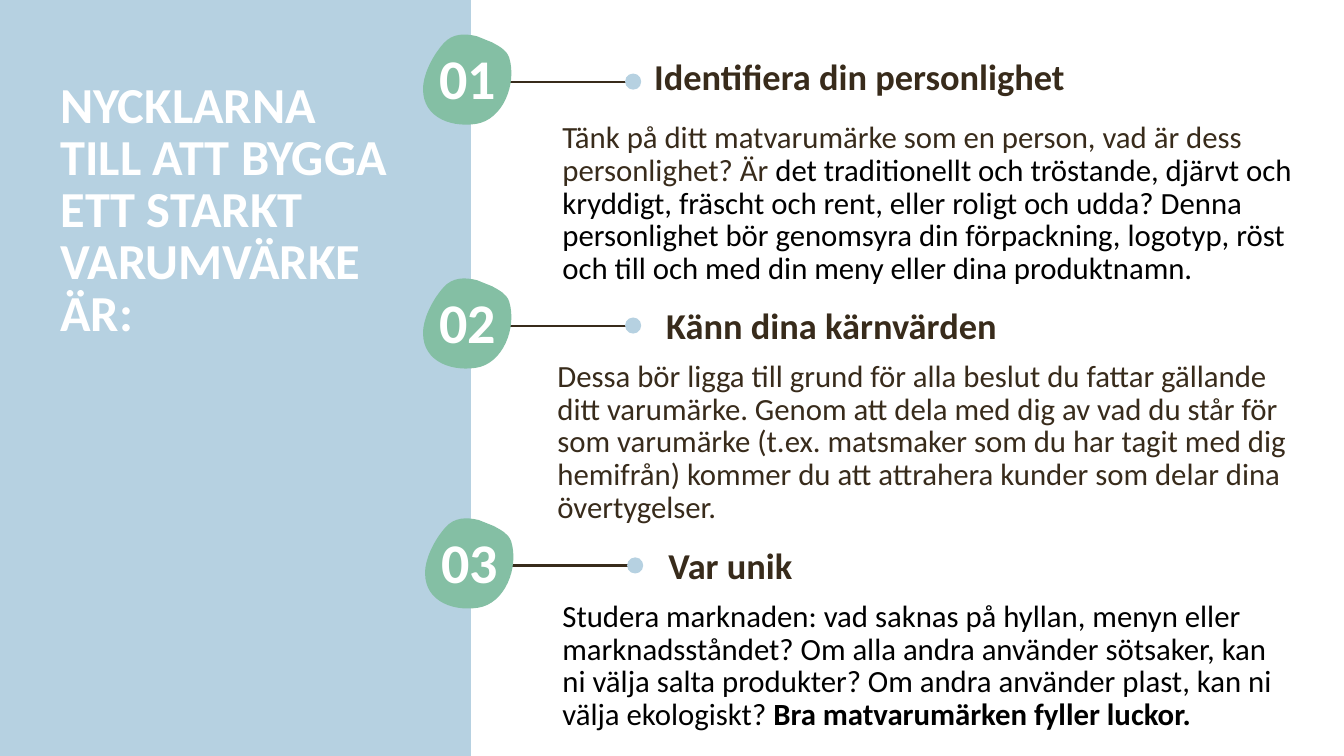
from lxml import etree
from pptx import Presentation
from pptx.dml.color import RGBColor
from pptx.enum import shapes, text
from pptx.oxml import ns
from pptx.util import Inches, Pt

FONT = "Calibri"
BLUE = RGBColor(0xB6, 0xD1, 0xE1)
GREEN = RGBColor(0x84, 0xBF, 0xA4)
BROWN = RGBColor(0x38, 0x2B, 0x1B)
WHITE = RGBColor(0xFF, 0xFF, 0xFF)
BLACK = RGBColor(0, 0, 0)

BLOB_SIZE = (0.87, 0.9)
BLOB_START = (0.53, 0.02)
BLOB_CURVES = [
    ((0.41, -0.01), (0.29, -0.01), (0.2, 0.09)),
    ((0.11, 0.19), (0.02, 0.35), (0, 0.49)),
    ((-0.04, 0.8), (0.24, 0.93), (0.52, 0.89)),
    ((0.79, 0.85), (0.93, 0.49), (0.85, 0.23)),
    ((0.82, 0.15), (0.75, 0.12), (0.68, 0.08)),
    ((0.63, 0.06), (0.58, 0.04), BLOB_START),
]

KEYS = [
    ("01", (4.2, 0.34), "Identifiera din personlighet", (6.39, 0.49),
     [("Tänk på ditt matvarumärke som en person, vad är dess personlighet? Är ", BROWN, False),
      ("det traditionellt och tröstande, djärvt och kryddigt, fräscht och rent, eller roligt "
       "och udda? Denna personlighet bör genomsyra din förpackning, logotyp, röst och till och "
       "med din meny eller dina produktnamn.", BLACK, False)],
     (5.48, 1.16, 7.69, 2.65)),
    ("02", (4.2, 2.76), "Känn dina kärnvärden", (6.51, 2.96),
     [("Dessa bör ligga till grund för alla beslut du fattar gällande ditt varumärke. Genom att "
       "dela med dig av vad du står för som varumärke (t.ex. matsmaker som du har tagit med dig "
       "hemifrån) kommer du att attrahera kunder som delar dina övertygelser.", BROWN, False)],
     (5.43, 3.53, 7.45, 1.43)),
    ("03", (4.22, 5.14), "Var unik", (6.53, 5.34),
     [("Studera marknaden: vad saknas på hyllan, menyn eller marknadsståndet? Om alla andra "
       "använder sötsaker, kan ni välja salta produkter? Om andra använder plast, kan ni välja "
       "ekologiskt? ", BLACK, False),
      ("Bra matvarumärken fyller luckor.", BLACK, True)],
     (5.48, 5.91, 7.39, 1.2)),
]


def paint(shape, color):
    shape.shadow.inherit = False
    shape.fill.solid()
    shape.fill.fore_color.rgb = color
    shape.line.fill.background()


def write(frame, runs, size, spacing=None, align=text.PP_ALIGN.LEFT):
    frame.word_wrap = True
    frame.auto_size = text.MSO_AUTO_SIZE.NONE
    frame.vertical_anchor = text.MSO_ANCHOR.TOP
    paragraph = frame.paragraphs[0]
    paragraph.alignment = align
    if spacing:
        paragraph.line_spacing = spacing
    for wording, color, bold in runs:
        run = paragraph.add_run()
        run.text = wording
        run.font.name = FONT
        run.font.size = Pt(size)
        run.font.bold = bold
        run.font.color.rgb = color


def add_text(parent, box, runs, size, **layout):
    label = parent.add_textbox(*map(Inches, box))
    write(label.text_frame, runs, size, **layout)


def add_blob(parent, left, top):
    outline = parent.build_freeform(*map(Inches, BLOB_START))
    outline.add_line_segments([tuple(map(Inches, curve[-1])) for curve in BLOB_CURVES])
    blob = outline.convert_to_shape()
    blob.left, blob.top = Inches(left), Inches(top)
    blob.width, blob.height = map(Inches, BLOB_SIZE)
    contour = blob._element.find(".//" + ns.qn("a:path"))
    contour.set("w", str(blob.width))
    contour.set("h", str(blob.height))
    for segment in list(contour):
        contour.remove(segment)
    for tag, points in [("a:moveTo", [BLOB_START])] + [("a:cubicBezTo", c) for c in BLOB_CURVES]:
        segment = etree.SubElement(contour, ns.qn(tag))
        for x, y in points:
            etree.SubElement(segment, ns.qn("a:pt"), x=str(Inches(x)), y=str(Inches(y)))
    etree.SubElement(contour, ns.qn("a:close"))
    paint(blob, GREEN)


def add_marker(slide, left, top, number):
    marker = slide.shapes.add_group_shape().shapes
    stem = marker.add_connector(
        shapes.MSO_CONNECTOR.STRAIGHT,
        Inches(left + 2.05), Inches(top + 0.47), Inches(left + 0.72), Inches(top + 0.47))
    stem.line.color.rgb = BROWN
    stem.line.width = Pt(1.5)
    etree.SubElement(stem._element.spPr, ns.qn("a:effectLst"))
    dot = marker.add_shape(
        shapes.MSO_SHAPE.OVAL,
        Inches(left + 2), Inches(top + 0.39), Inches(0.16), Inches(0.16))
    paint(dot, BLUE)
    add_blob(marker, left, top)
    add_text(marker, (left - 0.05, top + 0.12, 0.98, 0.59), [(number, WHITE, True)], 40,
             spacing=0.9, align=text.PP_ALIGN.CENTER)


def add_key(slide, number, marker_at, heading, heading_at, body, body_box):
    add_marker(slide, *marker_at, number)
    add_text(slide.shapes, (*heading_at, 6.67, 0.54), [(heading, BROWN, True)], 26)
    add_text(slide.shapes, body_box, body, 22, spacing=Pt(23.4))


def add_title_panel(slide, left, top, width, height):
    panel = slide.shapes.add_shape(
        shapes.MSO_SHAPE.RECTANGLE, *map(Inches, (left, top, width, height)))
    paint(panel, BLUE)
    title = slide.shapes.title
    panel._element.addnext(title._element)
    title.left, title.top = Inches(left + 0.5), Inches(top + 0.76)
    title.width, title.height = Inches(3.61), Inches(2.2)
    write(title.text_frame,
          [("NYCKLARNA TILL ATT BYGGA ETT STARKT VARUMVÄRKE ÄR:", WHITE, True)],
          36, spacing=Pt(37.2))


def main():
    deck = Presentation()
    deck.slide_width, deck.slide_height = Inches(13.33), Inches(7.5)
    slide = deck.slides.add_slide(deck.slide_layouts[5])
    add_title_panel(slide, 0, 0, 4.67, 7.5)
    for key in KEYS:
        add_key(slide, *key)
    deck.save("out.pptx")


if __name__ == "__main__":
    main()
